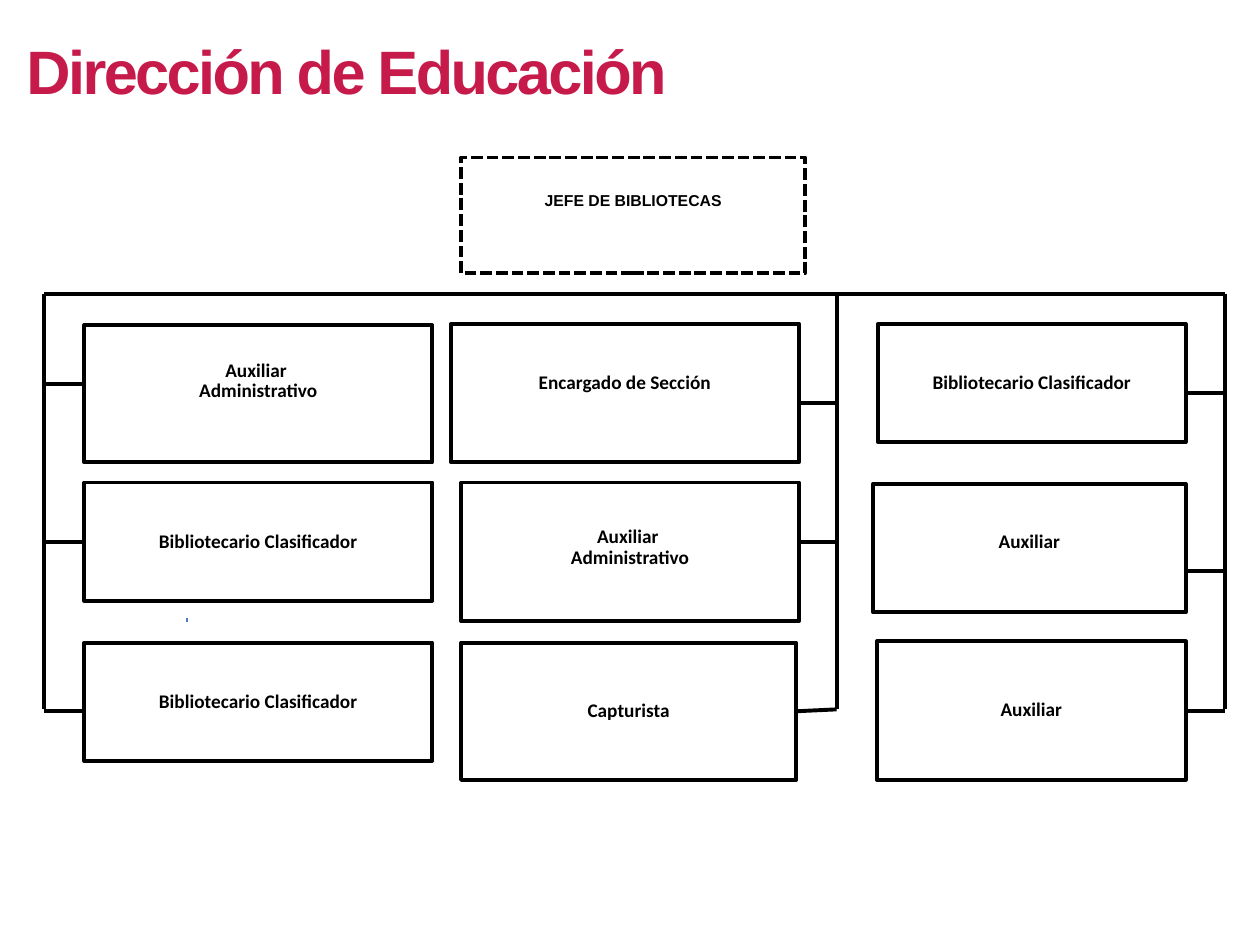
from pptx import Presentation
from pptx.dml.color import RGBColor
from pptx.enum.dml import MSO_LINE
from pptx.enum.shapes import MSO_CONNECTOR, MSO_SHAPE
from pptx.enum.text import MSO_ANCHOR, MSO_AUTO_SIZE, PP_ALIGN
from pptx.oxml import parse_xml
from pptx.oxml.ns import nsdecls
from pptx.util import Inches, Pt


def color(code):
    return RGBColor.from_string(code)


def wire(x1, y1, x2, y2, code="000000"):
    """Draw a straight line without a shadow and return it."""
    line = slide.shapes.add_connector(
        MSO_CONNECTOR.STRAIGHT, Inches(x1), Inches(y1), Inches(x2), Inches(y2))
    line.line.color.rgb = color(code)
    line.line.width = Pt(2.25)
    line._element.spPr.append(parse_xml(f"<a:effectLst {nsdecls('a')}/>"))
    return line


deck = Presentation()
deck.slide_width, deck.slide_height = Inches(10), Inches(7.5)
slide = deck.slides.add_slide(deck.slide_layouts[5])

# Title
title = slide.shapes.title
title.left, title.top = Inches(0.11), Inches(0.21)
title.width, title.height = Inches(6.81), Inches(0.69)
frame = title.text_frame
frame.text = "Dirección de Educación"
frame.auto_size = MSO_AUTO_SIZE.NONE
frame.vertical_anchor = MSO_ANCHOR.TOP
frame.paragraphs[0].alignment = PP_ALIGN.LEFT
run = frame.paragraphs[0].runs[0]
run.font.name, run.font.size, run.font.bold = "Arial", Pt(35), True
run.font.color.rgb = color("C51A4A")
run._r.get_or_add_rPr().set("spc", "-150")

# Posts: left, top, width, height, lift of the text above the middle, text
clerk = "Auxiliar \nAdministrativo"
sorter = "Bibliotecario Clasificador"
posts = [
    (3.66, 1.25, 2.73, 0.92, 0.12, "JEFE DE BIBLIOTECAS"),
    (0.67, 2.58, 2.76, 1.09, 0.10, clerk),
    (0.67, 3.83, 2.76, 0.94, 0, sorter),
    (0.67, 5.10, 2.76, 0.94, 0, sorter),
    (3.58, 2.57, 2.76, 1.10, 0.08, "Encargado de Sección"),
    (3.66, 3.83, 2.68, 1.10, 0.03, clerk),
    (3.66, 5.10, 2.66, 1.09, 0, "Capturista"),
    (6.97, 2.57, 2.44, 0.94, 0, sorter),
    (6.93, 3.84, 2.48, 1.02, 0.05, "Auxiliar"),
    (6.96, 5.09, 2.45, 1.10, 0, "Auxiliar"),
]
boxes = []
for left, top, width, height, lift, text in posts:
    box = slide.shapes.add_shape(
        MSO_SHAPE.RECTANGLE, Inches(left), Inches(top), Inches(width), Inches(height))
    box.shadow.inherit = False
    box.fill.solid()
    box.fill.fore_color.rgb = color("FFFFFF")
    box.line.color.rgb = color("000000")
    box.line.width = Pt(2.25)
    frame = box.text_frame
    frame.text = text
    frame.word_wrap = False
    frame.vertical_anchor = MSO_ANCHOR.MIDDLE
    frame.margin_bottom = Inches(0.05 + 2 * lift)
    for para in frame.paragraphs:
        para.alignment = PP_ALIGN.CENTER
        para.line_spacing = 0.9
        font = para.runs[0].font
        font.name, font.size, font.bold = "Calibri", Pt(11), True
        font.color.rgb = color("000000")
    boxes.append(box)

chief, *staff = boxes
chief.line.dash_style = MSO_LINE.SQUARE_DOT
label = chief.text_frame.paragraphs[0]
label.line_spacing = 1.0
label.runs[0].font.name, label.runs[0].font.size = "Arial", Pt(9)

# Top bar, then one trunk per column with a branch to each post
wire(0.35, 2.33, 9.72, 2.33)
trunks = [
    (0.35, 1, (3.05, 4.30, 5.64)),
    (6.64, 3, (3.20, 4.30, 5.63)),
    (9.72, 3, (3.12, 4.53, 5.64)),
]
for col, (x, side, levels) in enumerate(trunks):
    wire(x, 2.33, x, 5.63)
    for box, y in zip(staff[3 * col:3 * col + 3], levels):
        edge = box.left if side == 1 else box.left + box.width
        branch = wire(edge / Inches(1), y, x, y)
        middle = box.top + box.height / 2
        if abs(middle - Inches(y)) < Inches(0.02):
            branch.begin_connect(box, side)

# Small blue mark under the left column
wire(1.48, 4.92, 1.49, 4.92, "4B7EBC")

deck.save("out.pptx")
